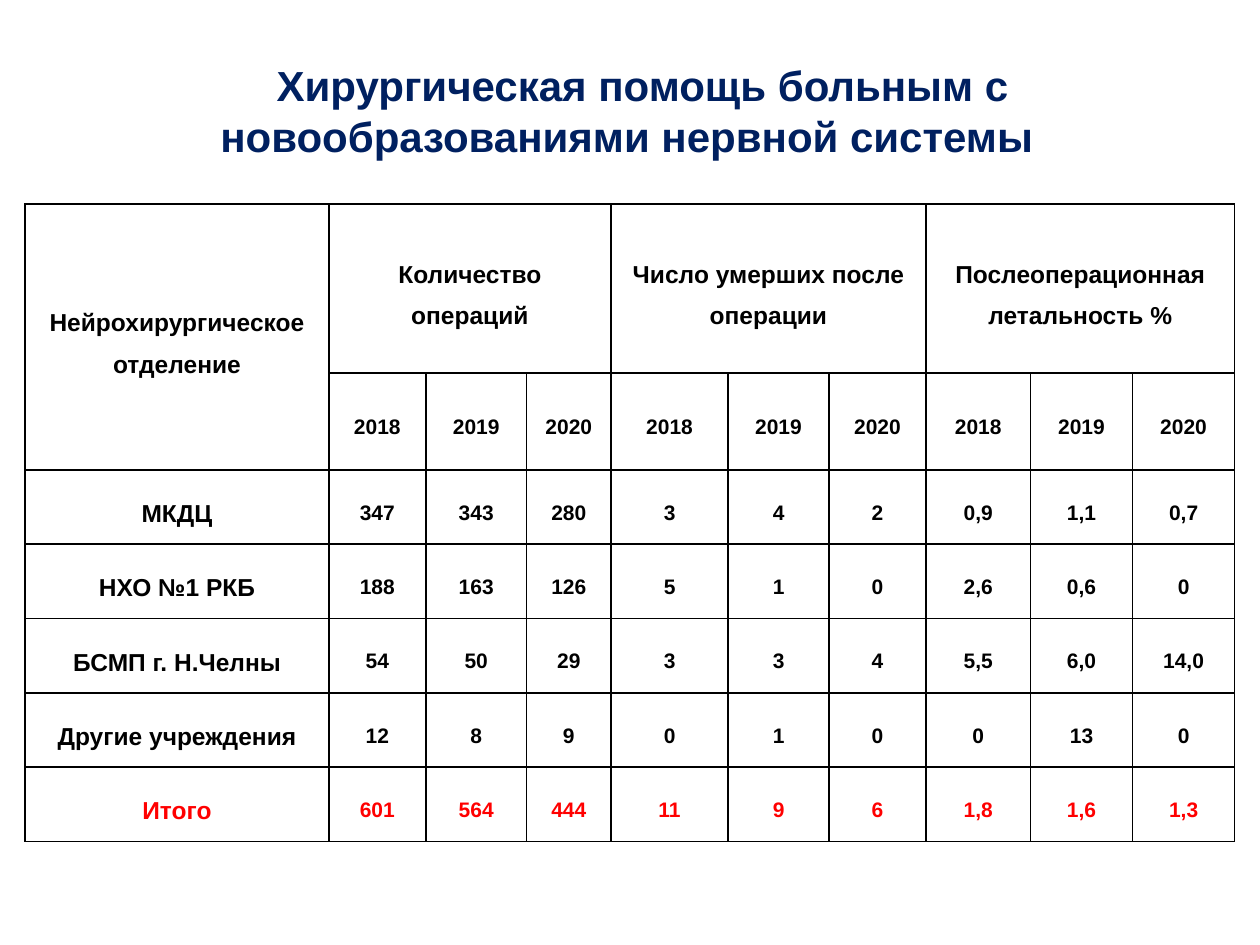
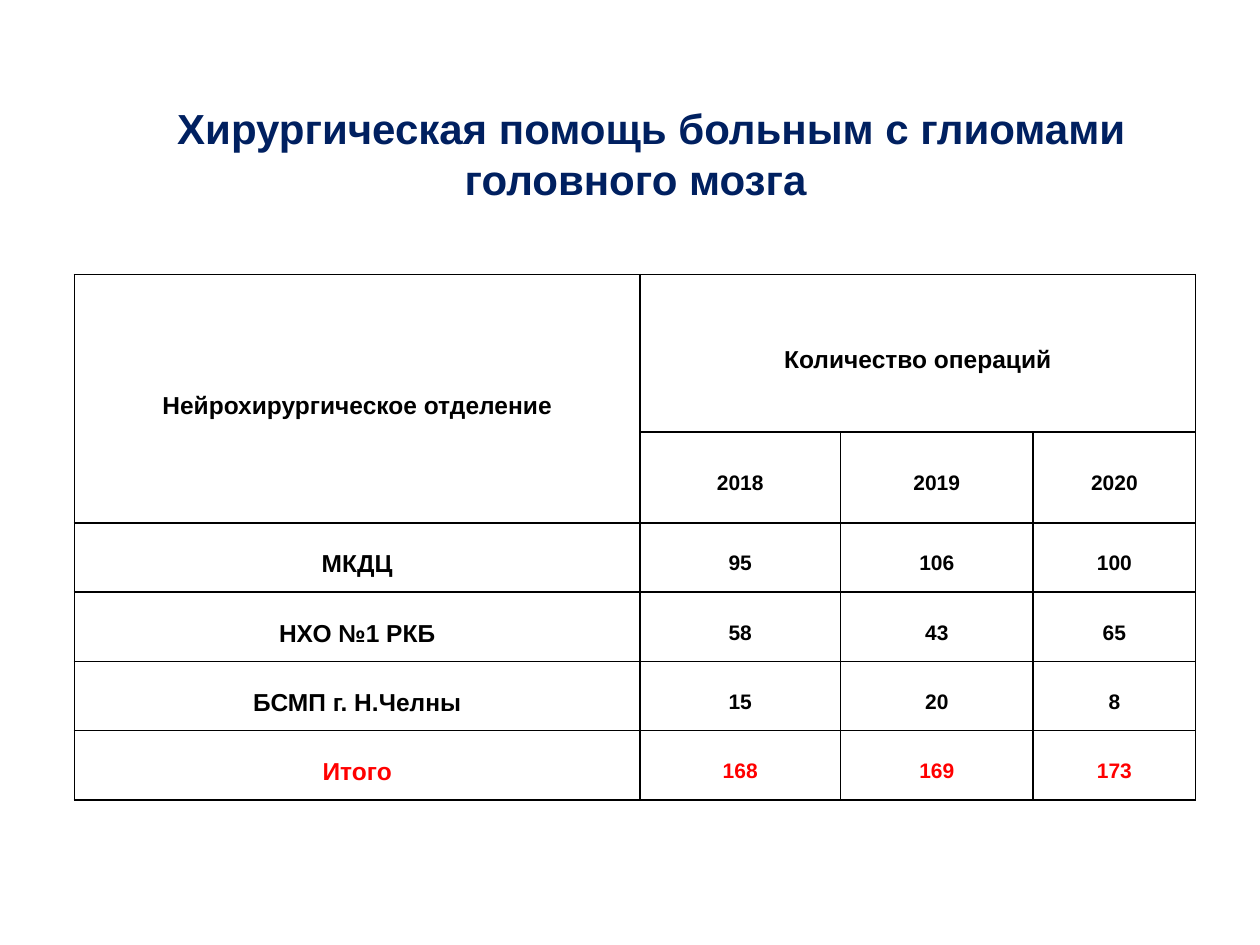
import pptx
import pptx.dml.color
import pptx.enum.text
import pptx.oxml
import pptx.oxml.ns
import pptx.util
from pptx.util import Inches

COLORS = {"title": "002060", "text": "000000", "total": "FF0000", "border": "000000"}
YEARS = ["2018", "2019", "2020"]
DEPARTMENT = "Нейрохирургическое отделение"
OPERATIONS = "Количество операций"


class Deck:
    font = "Arial"
    title_size, label_size, value_size = 24, 14, 12
    border_width = 1

    def __init__(self):
        self.prs = pptx.Presentation()
        self.prs.slide_width, self.prs.slide_height = Inches(10), Inches(7.5)
        self.slide = None

    def add_slide(self):
        self.slide = self.prs.slides.add_slide(self.prs.slide_layouts[6])

    def add_text(self, paragraph, text, size, color):
        paragraph.alignment = pptx.enum.text.PP_ALIGN.CENTER
        run = paragraph.add_run()
        run.text = text
        run.font.name, run.font.size, run.font.bold = self.font, pptx.util.Pt(size), True
        run.font.color.rgb = pptx.dml.color.RGBColor.from_string(COLORS[color])

    def title(self, left, top, text):
        frame = self.slide.shapes.add_textbox(
            Inches(left), Inches(top), Inches(8.13), Inches(0.91)).text_frame
        frame.word_wrap = True
        frame.auto_size = pptx.enum.text.MSO_AUTO_SIZE.SHAPE_TO_FIT_TEXT
        frame.vertical_anchor = pptx.enum.text.MSO_ANCHOR.MIDDLE
        heading = frame.paragraphs[0]
        self.add_text(heading, text, self.title_size, "title")
        heading_format = heading._p.get_or_add_pPr()
        heading_format.set("marL", "0")
        heading_format.set("indent", str(Inches(0.25)))

    def outline(self, cell):
        """Draw all four borders; they must precede the fill in the cell properties."""
        properties = cell._tc.get_or_add_tcPr()
        for position, side in enumerate(("lnL", "lnR", "lnT", "lnB")):
            properties.insert(position, pptx.oxml.parse_xml(
                f'<a:{side} {pptx.oxml.ns.nsdecls("a")} '
                f'w="{pptx.util.Pt(self.border_width)}"><a:solidFill>'
                f'<a:srgbClr val="{COLORS["border"]}"/></a:solidFill></a:{side}>'))

    def fill_cell(self, cell, text, size, color):
        cell.vertical_anchor = pptx.enum.text.MSO_ANCHOR.MIDDLE
        cell.margin_left = cell.margin_right = Inches(0.07)
        cell.margin_top = cell.margin_bottom = 0
        cell.fill.background()
        self.outline(cell)
        if text:
            paragraph = cell.text_frame.paragraphs[0]
            paragraph.line_spacing = 1.5
            self.add_text(paragraph, text, size, color)

    def statistics(self, left, top, widths, header_heights, row_height, measures, records):
        """Table with a group of year columns per measure and a closing total row."""
        span = len(YEARS)
        header = [DEPARTMENT]
        for measure in measures:
            header += [measure] + [""] * (span - 1)
        rows = [header, [""] + YEARS * len(measures)]
        rows += [[name, *values.split()] for name, values in records]
        heights = header_heights + [row_height] * len(records)
        table = self.slide.shapes.add_table(
            len(rows), len(widths), Inches(left), Inches(top),
            Inches(sum(widths)), Inches(sum(heights))).table
        table.first_row = table.horz_banding = False
        for column, width in zip(table.columns, widths):
            column.width = Inches(width)
        for row, height in zip(table.rows, heights):
            row.height = Inches(height)

        for r, texts in enumerate(rows):
            color = "total" if r == len(rows) - 1 else "text"
            for c, text in enumerate(texts):
                size = self.label_size if r == 0 or c == 0 else self.value_size
                self.fill_cell(table.cell(r, c), text, size, color)
        table.cell(0, 0).merge(table.cell(1, 0))
        for first in range(1, len(widths), span):
            table.cell(0, first).merge(table.cell(0, first + span - 1))


def main():
    deck = Deck()

    deck.add_slide()
    deck.title(0.91, 0.42, "Хирургическая помощь больным с новообразованиями нервной системы")
    deck.statistics(
        0.2, 1.62, [2.41, 0.77, 0.8, 0.67, 0.93, 0.8, 0.77, 0.83, 0.81, 0.81],
        [1.34, 0.77], 0.59,
        [OPERATIONS, "Число умерших после операции", "Послеоперационная летальность %"],
        [("МКДЦ", "347 343 280 3 4 2 0,9 1,1 0,7"),
         ("НХО №1 РКБ", "188 163 126 5 1 0 2,6 0,6 0"),
         ("БСМП г. Н.Челны", "54 50 29 3 3 4 5,5 6,0 14,0"),
         ("Другие учреждения", "12 8 9 0 1 0 0 13 0"),
         ("Итого", "601 564 444 11 9 6 1,8 1,6 1,3")])

    deck.add_slide()
    deck.title(0.98, 0.76, "Хирургическая помощь больным с глиомами головного мозга")
    deck.statistics(
        0.59, 2.18, [4.49, 1.59, 1.53, 1.29], [1.25, 0.72], 0.55, [OPERATIONS],
        [("МКДЦ", "95 106 100"),
         ("НХО №1 РКБ", "58 43 65"),
         ("БСМП г. Н.Челны", "15 20 8"),
         ("Итого", "168 169 173")])

    deck.prs.save("out.pptx")


if __name__ == "__main__":
    main()
